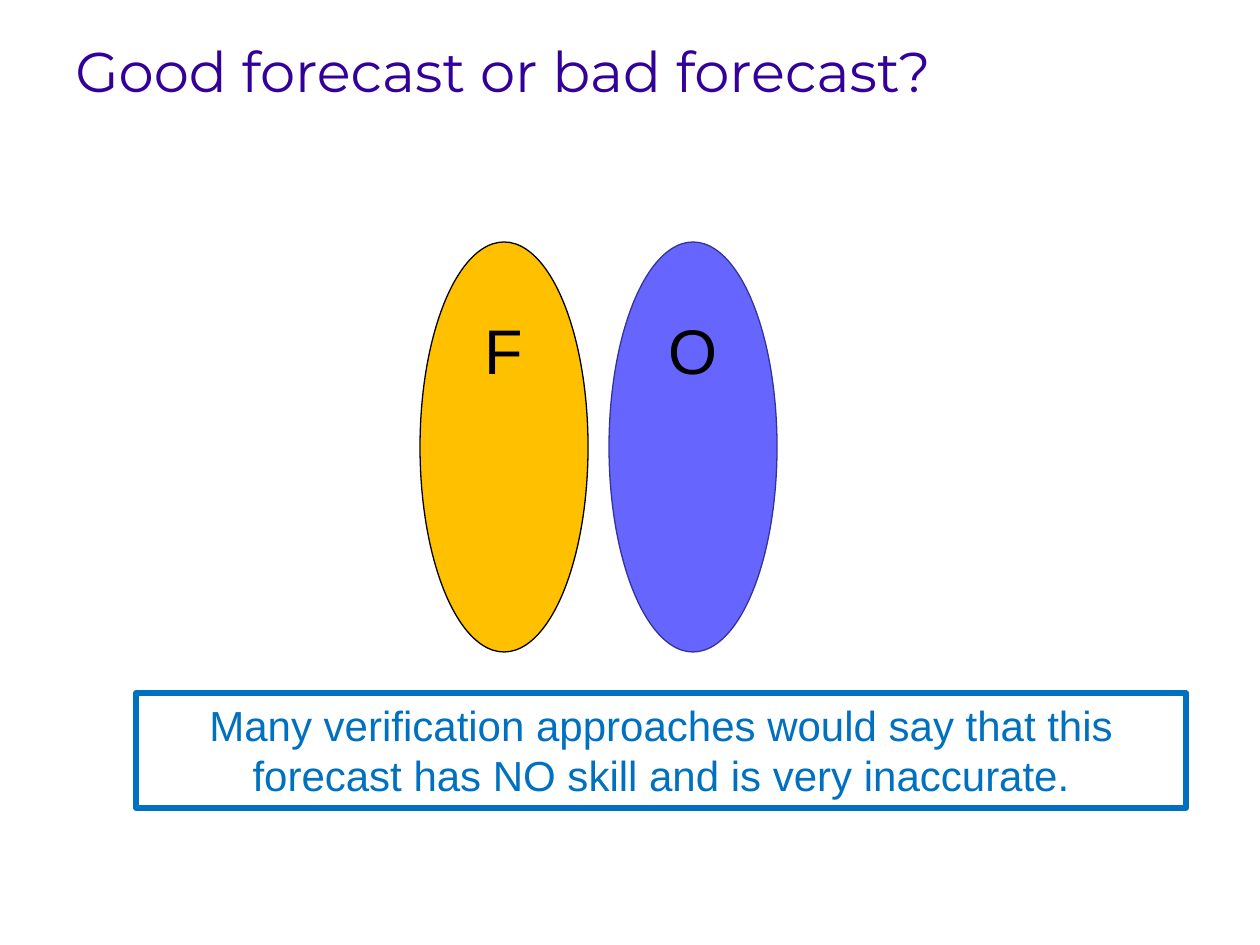
"""Build a slide asking whether a displaced forecast is good or bad."""
from dataclasses import dataclass
from typing import Optional

from pptx import Presentation
from pptx import util as u
from pptx.dml.color import RGBColor
from pptx.enum import shapes, text

PX = 914400 / 126


@dataclass(frozen=True)
class Theme:
    title: str = "330099"
    ink: str = "000000"
    forecast: str = "FFC000"
    observed: str = "6666FF"
    observed_line: str = "333399"
    note: str = "0070C0"
    title_font: str = "Montserrat"
    body_font: str = "Arial"
    title_size: int = 32
    label_size: int = 36
    note_size: int = 24
    thin: float = 0.75
    thick: float = 3


@dataclass(frozen=True)
class Box:
    left: int
    top: int
    width: int
    height: int

    def emu(self) -> list[u.Emu]:
        return [u.Emu(round(v * PX)) for v in (self.left, self.top, self.width, self.height)]


@dataclass(frozen=True)
class Label:
    words: str
    font: str
    size: int
    color: str
    align: text.PP_ALIGN = text.PP_ALIGN.CENTER
    anchor: text.MSO_ANCHOR = text.MSO_ANCHOR.TOP


@dataclass(frozen=True)
class Region:
    letter: str
    left: int
    label_width: int
    fill: str
    line: str


T = Theme()
REGION_TOP, REGION_WIDTH, REGION_HEIGHT = 242, 168, 410
LABEL_TOP, LABEL_HEIGHT = 305, 88
REGIONS = (
    Region("F", 420, 64, T.forecast, T.ink),
    Region("O", 609, 84, T.observed, T.observed_line),
)


def write(sp, label: Label) -> None:
    tf = sp.text_frame
    tf.word_wrap = True
    tf.vertical_anchor = label.anchor
    p = tf.paragraphs[0]
    p.alignment = label.align
    r = p.add_run()
    r.text = label.words
    r.font.name = label.font
    r.font.size = u.Pt(label.size)
    r.font.color.rgb = RGBColor.from_string(label.color)


def add_text(s, box: Box, label: Label) -> None:
    write(s.shapes.add_textbox(*box.emu()), label)


def add_shape(s, kind: shapes.MSO_SHAPE, box: Box, fill: Optional[str], line: str, weight: float):
    sp = s.shapes.add_shape(kind, *box.emu())
    sp.shadow.inherit = False
    if fill:
        sp.fill.solid()
        sp.fill.fore_color.rgb = RGBColor.from_string(fill)
    else:
        sp.fill.background()
    sp.line.color.rgb = RGBColor.from_string(line)
    sp.line.width = u.Pt(weight)
    return sp


def add_region(s, region: Region) -> None:
    box = Box(region.left, REGION_TOP, REGION_WIDTH, REGION_HEIGHT)
    add_shape(s, shapes.MSO_SHAPE.OVAL, box, region.fill, region.line, T.thin)
    left = region.left + (REGION_WIDTH - region.label_width) // 2
    add_text(s, Box(left, LABEL_TOP, region.label_width, LABEL_HEIGHT),
             Label(region.letter, T.body_font, T.label_size, T.ink))


def main() -> None:
    prs = Presentation()
    prs.slide_width, prs.slide_height = u.Inches(10), u.Inches(7.5)
    s = prs.slides.add_slide(prs.slide_layouts[6])
    add_text(s, Box(63, 0, 1134, 141),
             Label("Good forecast or bad forecast?", T.title_font, T.title_size, T.title,
                   text.PP_ALIGN.LEFT, text.MSO_ANCHOR.MIDDLE))
    for region in REGIONS:
        add_region(s, region)
    note = add_shape(s, shapes.MSO_SHAPE.RECTANGLE, Box(136, 693, 1050, 115),
                     None, T.note, T.thick)
    write(note, Label("Many verification approaches would say that this forecast "
                      "has NO skill and is very inaccurate.",
                      T.body_font, T.note_size, T.note))
    prs.save("out.pptx")


if __name__ == "__main__":
    main()
